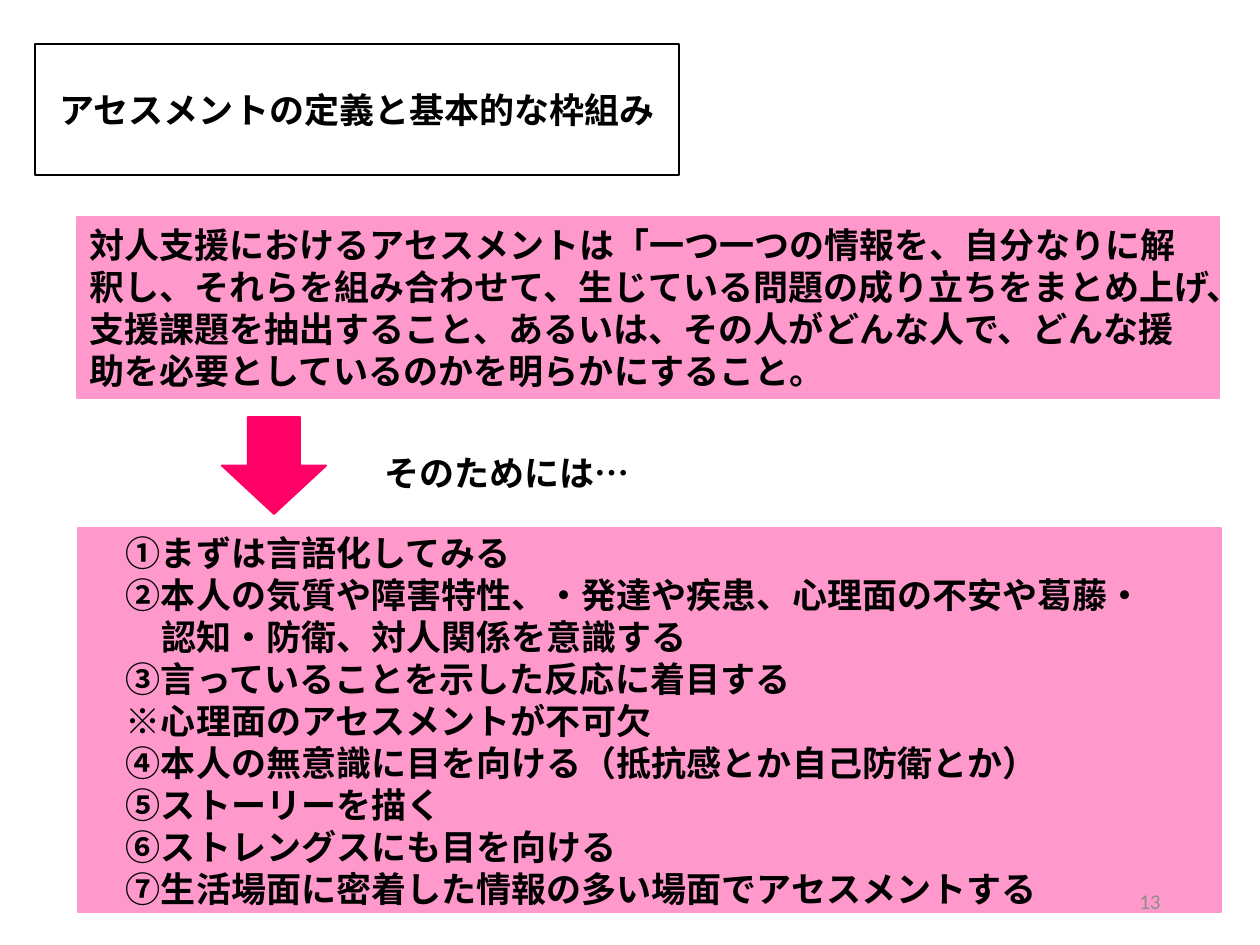
from pptx import Presentation
from pptx import util as u
from pptx.dml.color import RGBColor
from pptx.enum import shapes, text

Inches = u.Inches
THEME = {
    "font": "Calibri", "body": u.Pt(20), "small": u.Pt(12), "line": u.Pt(1),
    "ink": RGBColor.from_string("000000"),
    "panel": RGBColor.from_string("FF99CC"),
    "accent": RGBColor.from_string("FF0066"),
    "muted": RGBColor.from_string("8C8C8C"),
}
INDENT = 0.28  # one full-width character at body size


def write(part, lines, size="body", color="ink", bold=True,
          align=text.PP_ALIGN.LEFT, inset=0.1):
    frame = part.text_frame
    frame_format = {
        "word_wrap": True, "auto_size": text.MSO_AUTO_SIZE.NONE,
        "vertical_anchor": text.MSO_ANCHOR.MIDDLE,
        "margin_left": Inches(inset), "margin_right": Inches(0.1),
        "margin_top": Inches(0.05), "margin_bottom": Inches(0.05),
    }
    for name, value in frame_format.items():
        setattr(frame, name, value)
    frame.text = "\n".join(lines)
    font_format = {"name": THEME["font"], "size": THEME[size], "bold": bold}
    for paragraph in frame.paragraphs:
        paragraph.alignment = align
        for run in paragraph.runs:
            for name, value in font_format.items():
                setattr(run.font, name, value)
            run.font.color.rgb = THEME[color]


def add_filled(kind, box, color):
    part = slide.shapes.add_shape(kind, *map(Inches, box))
    part.shadow.inherit = False
    part.fill.solid()
    part.fill.fore_color.rgb = THEME[color]
    part.line.color.rgb = THEME[color]
    part.line.width = THEME["line"]
    return part


deck = Presentation()
deck.slide_width, deck.slide_height = Inches(10), Inches(7.5)
slide = deck.slides.add_slide(deck.slide_layouts[5])

# Framed title
title = slide.shapes.title
title_box = {"left": 0.28, "top": 0.35, "width": 5.11, "height": 1.04}
for name, value in title_box.items():
    setattr(title, name, Inches(value))
title.line.color.rgb = THEME["ink"]
title.line.width = THEME["line"]
write(title, ["アセスメントの定義と基本的な枠組み"], align=text.PP_ALIGN.CENTER)

# Definition panel
definition = add_filled(shapes.MSO_SHAPE.RECTANGLE, (0.61, 1.72, 9.07, 1.44), "panel")
write(definition, [
    "対人支援におけるアセスメントは「一つ一つの情報を、自分なりに解釈し、"
    "それらを組み合わせて、生じている問題の成り立ちをまとめ上げ、"
    "支援課題を抽出すること、あるいは、その人がどんな人で、"
    "どんな援助を必要としているのかを明らかにすること。"
])

# Steps panel, with the second line of step 2 indented
steps = add_filled(shapes.MSO_SHAPE.RECTANGLE, (0.62, 4.19, 9.07, 3.05), "panel")
write(steps, [
    "①まずは言語化してみる",
    "②本人の気質や障害特性、・発達や疾患、心理面の不安や葛藤・",
    "認知・防衛、対人関係を意識する",
    "③言っていることを示した反応に着目する",
    "※心理面のアセスメントが不可欠",
    "④本人の無意識に目を向ける（抵抗感とか自己防衛とか）",
    "⑤ストーリーを描く",
    "⑥ストレングスにも目を向ける",
    "⑦生活場面に密着した情報の多い場面でアセスメントする",
], inset=0.1 + INDENT)
continuation = steps.text_frame.paragraphs[2]
continuation._p.get_or_add_pPr().set("marL", str(Inches(INDENT)))

# Arrow from the definition to the steps
add_filled(shapes.MSO_SHAPE.DOWN_ARROW, (1.76, 3.31, 0.83, 0.77), "accent")
lead_in = slide.shapes.add_textbox(*map(Inches, (2.95, 3.5, 2.21, 0.5)))
write(lead_in, ["そのためには…"])

# Page number
page_number = slide.shapes.add_textbox(*map(Inches, (7.06, 6.95, 2.25, 0.4)))
write(page_number, ["13"], size="small", color="muted", bold=False,
      align=text.PP_ALIGN.RIGHT)

deck.save("out.pptx")
